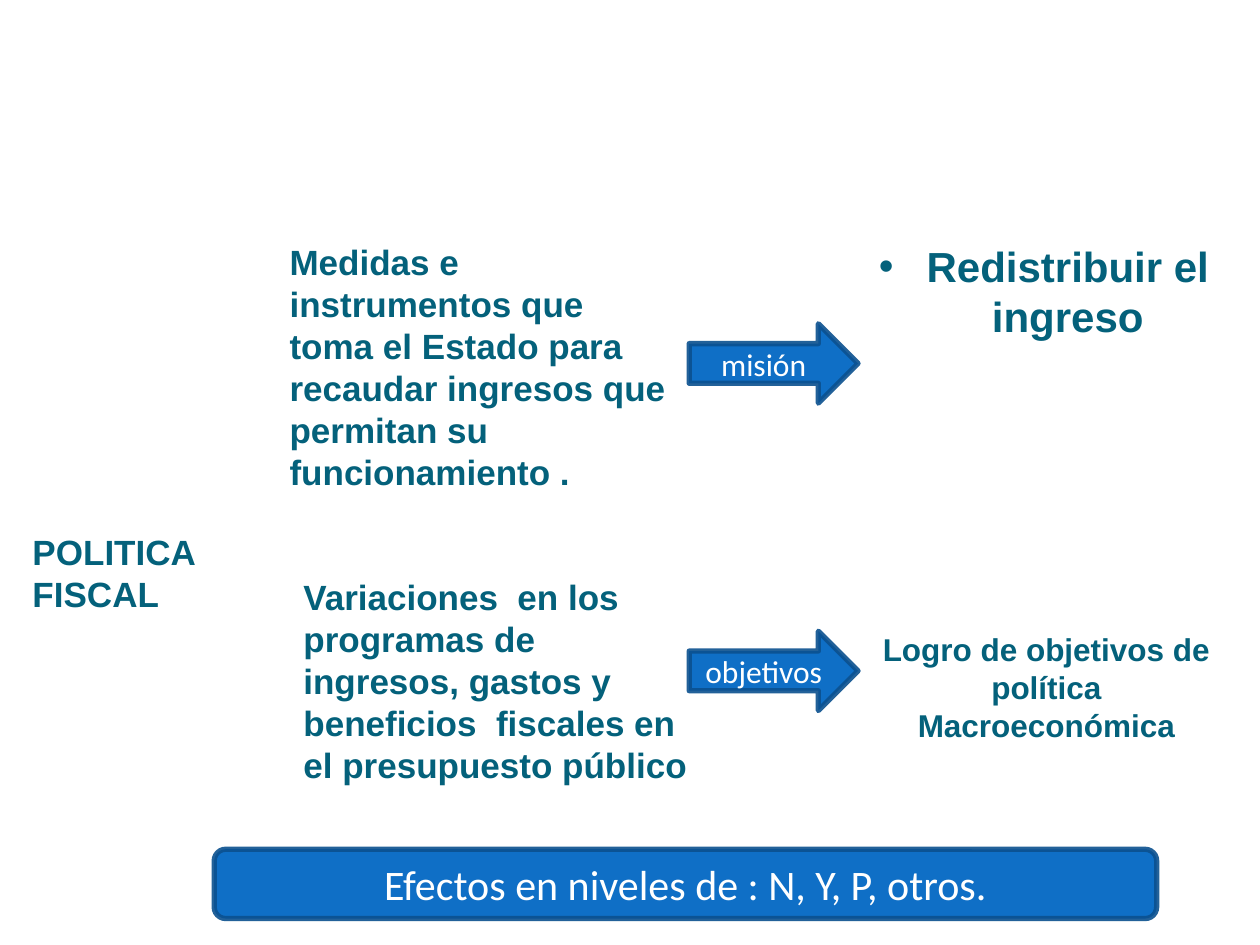
from lxml import etree
from pptx import Presentation
from pptx.dml.color import RGBColor
from pptx.enum.shapes import MSO_SHAPE
from pptx.enum.text import MSO_ANCHOR, PP_ALIGN
from pptx.oxml.ns import qn
from pptx.util import Inches, Pt

LEFT, CENTER = PP_ALIGN.LEFT, PP_ALIGN.CENTER
TOP, MIDDLE = MSO_ANCHOR.TOP, MSO_ANCHOR.MIDDLE
ARROW, BAR = MSO_SHAPE.RIGHT_ARROW, MSO_SHAPE.ROUNDED_RECTANGLE

THEME = {
    "text": RGBColor.from_string("04617B"),
    "fill": RGBColor.from_string("0F6FC6"),
    "line": RGBColor.from_string("0B508F"),
    "on_fill": RGBColor.from_string("FFFFFF"),
    "line_width": 3,
    "line_opacity": 90,
    "text_font": "Arial",
    "shape_font": "Calibri",
    "small": 18,
    "medium": 20,
    "large": 24,
}

TEXTS = [
    ("POLITICA FISCAL", (0.16, 4.16, 2.17, 0.77), {}),
    ("Medidas e instrumentos que toma el Estado para recaudar ingresos que "
     "permitan su funcionamiento .", (2.2, 1.86, 3.27, 2.12), {}),
    ("Variaciones  en los programas de ingresos, gastos y beneficios  fiscales "
     "en el presupuesto público", (2.31, 4.52, 3.27, 1.78), {}),
    ("Redistribuir el ingreso", (6.65, 1.86, 3.27, 0.91),
     {"size": "large", "align": CENTER, "bullet": "•"}),
    ("Logro de objetivos de política Macroeconómica", (6.81, 4.95, 2.99, 1.01),
     {"size": "small", "align": CENTER}),
]

SHAPES = [
    ("misión", ARROW, (5.47, 2.57, 1.34, 0.63), "small"),
    ("objetivos", ARROW, (5.47, 5.01, 1.34, 0.63), "small"),
    ("Efectos en niveles de : N, Y, P, otros.", BAR, (1.7, 6.74, 7.48, 0.55), "large"),
]


def write_text(shape, text, size="medium", font="text_font", color="text",
               bold=True, align=LEFT, anchor=TOP, bullet=None):
    frame = shape.text_frame
    frame.word_wrap = True
    frame.vertical_anchor = anchor
    paragraph = frame.paragraphs[0]
    paragraph.text = text
    paragraph.alignment = align
    if bullet:
        properties = paragraph._p.get_or_add_pPr()
        indent = Inches(0.38)
        properties.set("marL", str(indent))
        properties.set("indent", str(-indent))
        etree.SubElement(properties, qn("a:buFont"), typeface=THEME[font])
        etree.SubElement(properties, qn("a:buChar"), char=bullet)
    run_font = paragraph.runs[0].font
    run_font.name = THEME[font]
    run_font.size = Pt(THEME[size])
    run_font.bold = bold
    run_font.color.rgb = THEME[color]


def add_filled_shape(slide, kind, box):
    shape = slide.shapes.add_shape(kind, *map(Inches, box))
    shape.shadow.inherit = False
    shape.fill.solid()
    shape.fill.fore_color.rgb = THEME["fill"]
    shape.line.color.rgb = THEME["line"]
    shape.line.width = Pt(THEME["line_width"])
    line_color = shape.line._ln.find(qn("a:solidFill"))[0]
    etree.SubElement(line_color, qn("a:alpha"), val=str(THEME["line_opacity"] * 1000))
    return shape


def main():
    presentation = Presentation()
    presentation.slide_width, presentation.slide_height = Inches(10), Inches(7.5)
    slide = presentation.slides.add_slide(presentation.slide_layouts[6])
    for text, box, style in TEXTS:
        write_text(slide.shapes.add_textbox(*map(Inches, box)), text, **style)
    for text, kind, box, size in SHAPES:
        write_text(add_filled_shape(slide, kind, box), text, size=size,
                   font="shape_font", color="on_fill", bold=False,
                   align=CENTER, anchor=MIDDLE)
    presentation.save("out.pptx")


if __name__ == "__main__":
    main()
